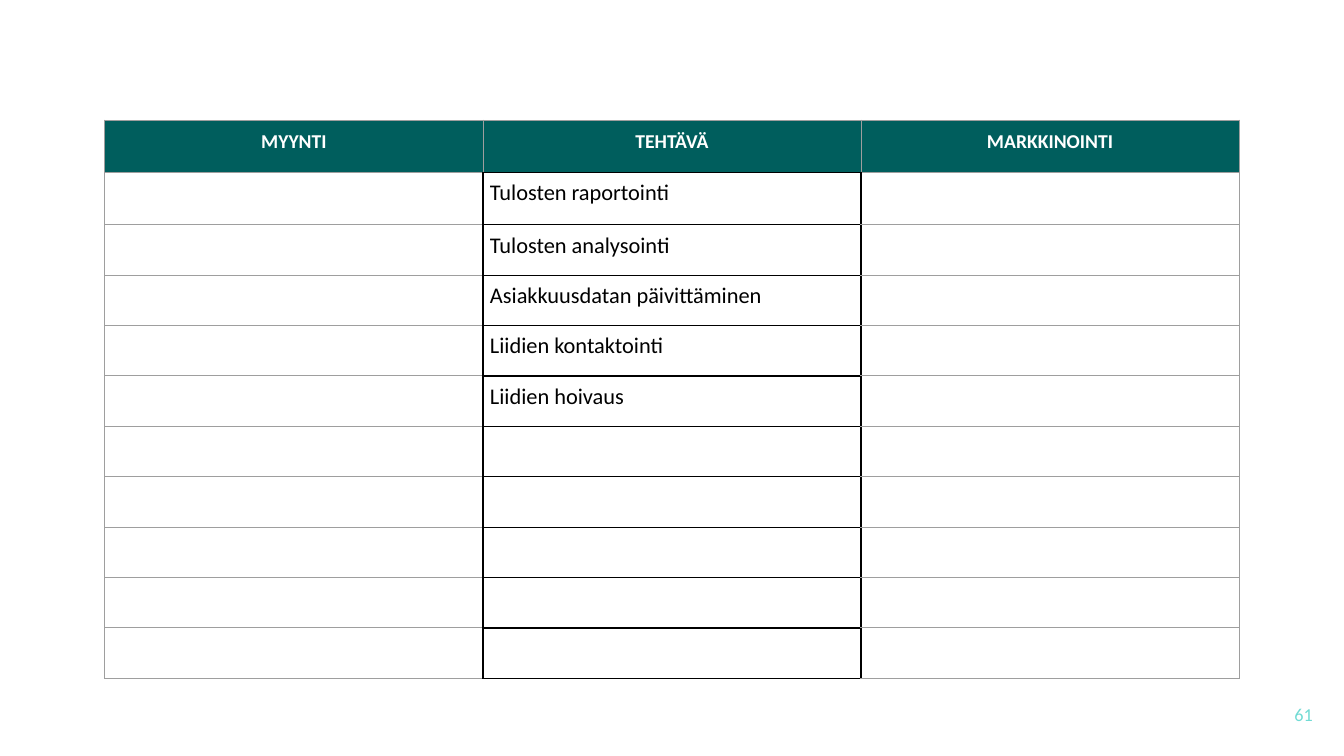
from lxml.etree import SubElement
from pptx import Presentation
from pptx.dml.color import RGBColor
from pptx.enum.text import MSO_ANCHOR as Anchor, PP_ALIGN as Align
from pptx.oxml.ns import qn
from pptx.util import Inches, Pt

TEAL, AQUA, WHITE, BLACK, GREY = "005E5D", "71DBD4", "FFFFFF", "000000", "9E9E9E"
HEADINGS = ["MYYNTI", "TEHTÄVÄ", "MARKKINOINTI"]
TASKS = ["Tulosten raportointi", "Tulosten analysointi", "Asiakkuusdatan päivittäminen",
         "Liidien kontaktointi", "Liidien hoivaus"]
ROW_HEIGHTS = [0.52] * 2 + [0.5] * 9
TASK_COLUMN = 1


def color(hex_string):
    return RGBColor.from_string(hex_string)


def write(frame, text, size=16, ink=BLACK, bold=False, align=Align.LEFT):
    paragraph = frame.paragraphs[0]
    paragraph.alignment = align
    paragraph.font.size = Pt(size)
    if text:
        run = paragraph.add_run()
        run.text = text
        run.font.name = "Calibri"
        run.font.size = Pt(size)
        run.font.bold = bold
        run.font.color.rgb = color(ink)


def set_margins(target, inset):
    target.margin_left = target.margin_right = Inches(inset)
    target.margin_top = target.margin_bottom = Inches(inset)


def set_borders(cell, black_sides):
    properties = cell._tc.get_or_add_tcPr()
    for side in "LRTB":
        ink, width = (BLACK, 1) if side in black_sides else (GREY, 0.75)
        line = SubElement(properties, qn(f"a:ln{side}"), w=str(Pt(width)))
        fill = SubElement(line, qn("a:solidFill"))
        SubElement(fill, qn("a:srgbClr"), val=ink)


def black_sides(row, column):
    if row == 0:
        return "B" if column == TASK_COLUMN else ""
    return ["R", "LRTB", "L"][column]


def add_task_table(slide, left, top, width):
    table = slide.shapes.add_table(
        len(ROW_HEIGHTS), len(HEADINGS), Inches(left), Inches(top),
        Inches(width), Inches(sum(ROW_HEIGHTS))).table
    table.first_row = table.horz_banding = False
    for column in table.columns:
        column.width = Inches(width / len(HEADINGS))

    for r, height in enumerate(ROW_HEIGHTS):
        table.rows[r].height = Inches(height)
        for c, heading in enumerate(HEADINGS):
            cell = table.cell(r, c)
            set_borders(cell, black_sides(r, c))
            if r == 0:
                # Header row
                set_margins(cell, 0.1)
                cell.fill.solid()
                cell.fill.fore_color.rgb = color(TEAL)
                write(cell.text_frame, heading, size=14, ink=WHITE, bold=True,
                      align=Align.CENTER)
            else:
                # Task rows, with blank cells to fill in
                set_margins(cell, 0.07)
                cell.fill.background()
                has_task = c == TASK_COLUMN and r <= len(TASKS)
                write(cell.text_frame, TASKS[r - 1] if has_task else "")


def add_page_number(slide, left, top, width, height):
    frame = slide.shapes.add_textbox(
        Inches(left), Inches(top), Inches(width), Inches(height)).text_frame
    frame.word_wrap = True
    frame.vertical_anchor = Anchor.MIDDLE
    set_margins(frame, 0.13)
    write(frame, "61", size=13, ink=AQUA, align=Align.RIGHT)


def main():
    deck = Presentation()
    deck.slide_width, deck.slide_height = Inches(13.33), Inches(7.5)
    slide = deck.slides.add_slide(deck.slide_layouts[6])
    add_page_number(slide, 12.35, 6.8, 0.8, 0.57)
    add_task_table(slide, 1.04, 1.19, 11.25)
    deck.save("out.pptx")


if __name__ == "__main__":
    main()
